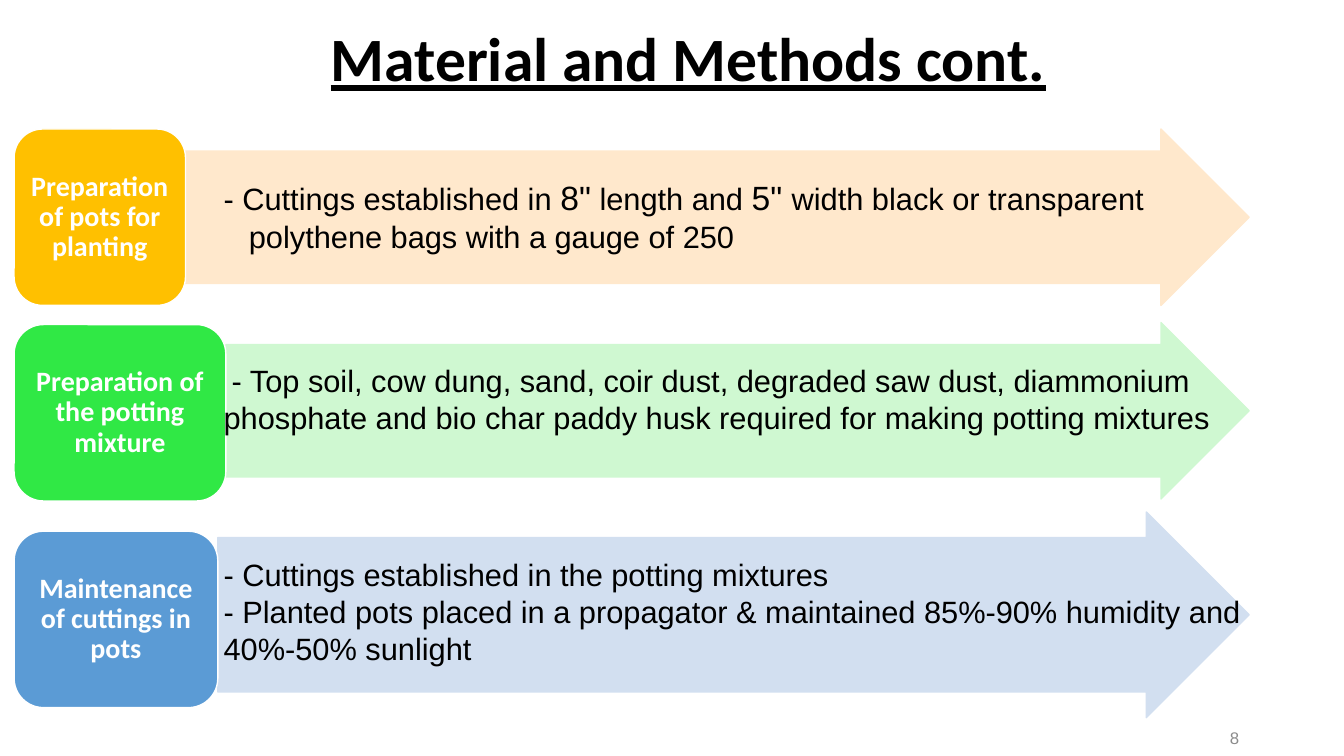
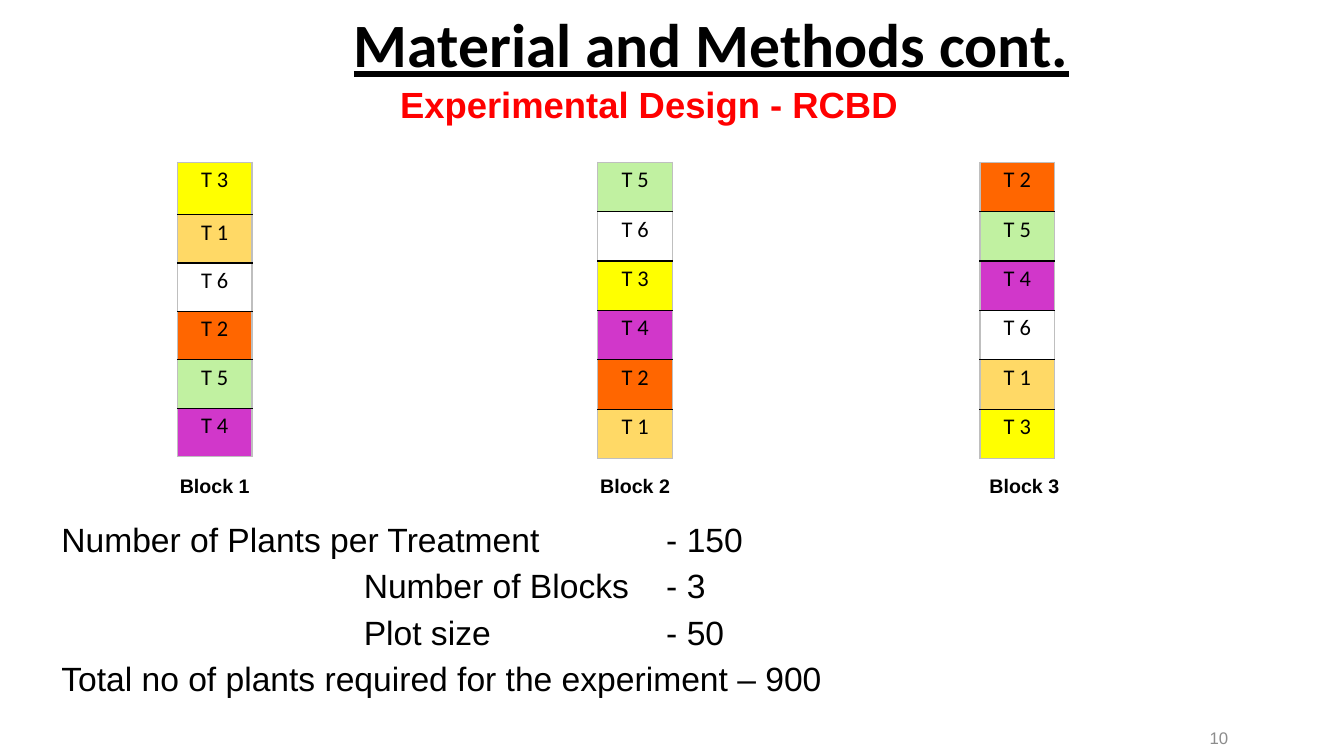
from lxml import etree
from pptx import Presentation
from pptx.dml.color import RGBColor
from pptx.enum.shapes import MSO_SHAPE
from pptx.enum.text import MSO_ANCHOR, PP_ALIGN
from pptx.oxml.ns import qn
from pptx.util import Inches, Pt

ARROW = MSO_SHAPE.RIGHT_ARROW
ROUNDED = MSO_SHAPE.ROUNDED_RECTANGLE
TOP, MIDDLE = MSO_ANCHOR.TOP, MSO_ANCHOR.MIDDLE
LEFT, CENTER, RIGHT = PP_ALIGN.LEFT, PP_ALIGN.CENTER, PP_ALIGN.RIGHT

BLACK = RGBColor(0x00, 0x00, 0x00)
WHITE = RGBColor(0xFF, 0xFF, 0xFF)
GREY = RGBColor(0x8C, 0x8C, 0x8C)
BORDER_GREY = RGBColor(0xBF, 0xBF, 0xBF)
RED = RGBColor(0xFF, 0x00, 0x00)
AMBER = RGBColor(0xFF, 0xC0, 0x00)
GREEN = RGBColor(0x30, 0xE8, 0x45)
BLUE = RGBColor(0x5B, 0x9B, 0xD5)
PALE_AMBER = RGBColor(0xFF, 0xE8, 0xCC)
PALE_GREEN = RGBColor(0xCF, 0xF8, 0xD1)
PALE_BLUE = RGBColor(0xD2, 0xDF, 0xF0)

TREATMENT_COLORS = {
    "T 1": RGBColor(0xFF, 0xD9, 0x66),
    "T 2": RGBColor(0xFF, 0x66, 0x00),
    "T 3": RGBColor(0xFF, 0xFF, 0x00),
    "T 4": RGBColor(0xD1, 0x37, 0xCA),
    "T 5": RGBColor(0xC1, 0xF1, 0xA1),
    "T 6": WHITE,
}

HEADING_FONT = "Calibri"
BODY_FONT = "Arial"


def write(paragraph, text, size=22, font=BODY_FONT, color=BLACK, bold=False,
          underline=False, align=LEFT, spacing=1.0, after=0):
    paragraph.alignment = align
    paragraph.line_spacing = spacing
    paragraph.space_after = Pt(after)
    pieces = [(text, size)] if isinstance(text, str) else text
    for piece, piece_size in pieces:
        run = paragraph.add_run()
        run.text = piece
        run.font.size = Pt(piece_size)
        run.font.name = font
        run.font.color.rgb = color
        run.font.bold = bold
        run.font.underline = underline


def set_indent(paragraph, left=0, first=0):
    properties = paragraph._p.get_or_add_pPr()
    properties.set("marL", str(Inches(left)))
    properties.set("indent", str(Inches(first)))


def set_tabs(paragraph, stops):
    properties = paragraph._p.get_or_add_pPr()
    tab_list = etree.SubElement(properties, qn("a:tabLst"))
    for stop in stops:
        etree.SubElement(tab_list, qn("a:tab"), pos=str(Inches(stop)), algn="l")


def set_border(cell, side, color):
    properties = cell._tc.get_or_add_tcPr()
    line = etree.Element(qn(f"a:ln{side}"), w=str(Pt(1)))
    fill = etree.SubElement(line, qn("a:solidFill"))
    etree.SubElement(fill, qn("a:srgbClr"), val=str(color))
    properties.insert("LRTB".index(side), line)


class Deck:
    def __init__(self):
        self.presentation = Presentation()
        self.presentation.slide_width = Inches(13.33)
        self.presentation.slide_height = Inches(7.5)
        self.slide = None

    def add_slide(self, title, left, top, number, number_left):
        layout = self.presentation.slide_layouts[5]
        self.slide = self.presentation.slides.add_slide(layout)
        shape = self.slide.shapes.title
        shape.left, shape.top = Inches(left), Inches(top)
        shape.width, shape.height = Inches(10.15), Inches(1.29)
        shape.text_frame.vertical_anchor = MIDDLE
        write(shape.text_frame.paragraphs[0], title, size=44, font=HEADING_FONT,
              bold=True, underline=True, spacing=0.9)
        self.text([number], number_left, 7.12, 3, 0.4, anchor=MIDDLE,
                  size=12, color=GREY, align=RIGHT)

    def text(self, lines, left, top, width, height, anchor=TOP, **style):
        box = self.slide.shapes.add_textbox(
            Inches(left), Inches(top), Inches(width), Inches(height))
        frame = box.text_frame
        frame.word_wrap = True
        frame.vertical_anchor = anchor
        for index, line in enumerate(lines):
            paragraph = frame.add_paragraph() if index else frame.paragraphs[0]
            write(paragraph, line, **style)
        return frame.paragraphs

    def shape(self, kind, left, top, width, height, fill, line):
        shape = self.slide.shapes.add_shape(
            kind, Inches(left), Inches(top), Inches(width), Inches(height))
        shape.shadow.inherit = False
        shape.fill.solid()
        shape.fill.fore_color.rgb = fill
        shape.line.color.rgb = line
        shape.line.width = Pt(1)
        return shape

    def arrow(self, left, top, height, color):
        arrow = self.shape(ARROW, left, top, 12.39 - left, height, color, color)
        arrow.adjustments[0] = 0.75
        arrow.adjustments[1] = 0.5

    def label(self, text, top, width, color):
        label = self.shape(ROUNDED, 0.14, top, width, 1.75, color, WHITE)
        frame = label.text_frame
        frame.word_wrap = True
        frame.vertical_anchor = MIDDLE
        frame.margin_left = frame.margin_right = Inches(0.08)
        frame.margin_top = frame.margin_bottom = Inches(0.04)
        write(frame.paragraphs[0], text, size=20, font=HEADING_FONT,
              color=WHITE, bold=True, align=CENTER, spacing=0.9)

    def block(self, treatments, left, row_heights):
        count = len(treatments)
        table = self.slide.shapes.add_table(
            count, 1, Inches(left), Inches(1.61), Inches(0.74),
            Inches(sum(row_heights))).table
        table.first_row = False
        table.horz_banding = False
        for index, treatment in enumerate(treatments):
            table.rows[index].height = Inches(row_heights[index])
            cell = table.cell(index, 0)
            cell.fill.solid()
            cell.fill.fore_color.rgb = TREATMENT_COLORS[treatment]
            cell.margin_left = cell.margin_right = Inches(0.07)
            cell.margin_top = cell.margin_bottom = 0
            write(cell.text_frame.paragraphs[0], treatment, size=16,
                  font=HEADING_FONT, align=CENTER, spacing=1.15, after=10)
            set_border(cell, "L", BORDER_GREY)
            set_border(cell, "R", BORDER_GREY)
            set_border(cell, "T", BLACK if index else BORDER_GREY)
            set_border(cell, "B", BLACK if index < count - 1 else BORDER_GREY)


def add_methods_slide(deck):
    deck.add_slide("Material and Methods cont.", 3.18, -0.03, "8", 9.39)
    steps = [
        ("Preparation of pots for planting", 1.28, 1.7, AMBER,
         1.83, 1.28, 1.75, PALE_AMBER),
        ("Preparation of the potting mixture", 3.22, 2.1, GREEN,
         2.24, 3.2, 1.75, PALE_GREEN),
        ("Maintenance of cuttings in pots", 5.27, 2.02, BLUE,
         2.16, 5.08, 2.04, PALE_BLUE),
    ]
    for name, top, width, color, arrow_left, arrow_top, height, pale in steps:
        deck.arrow(arrow_left, arrow_top, height, pale)
        deck.label(name, top, width, color)

    pots = deck.text([
        [("- Cuttings established in ", 22), ('8"', 24), (" length and ", 22),
         ('5" ', 24), ("width black or transparent", 22)],
        "polythene bags with a gauge of 250",
    ], 2.12, 1.71, 11.08, 0.88)
    set_indent(pots[1], left=0.25)
    mixture = deck.text([
        "- Top soil, cow dung, sand, coir dust, degraded saw dust, diammonium "
        "phosphate and bio char paddy husk required for making potting mixtures",
    ], 2.12, 3.54, 10.7, 1.21)
    set_indent(mixture[0], first=0.08)
    deck.text([
        "- Cuttings established in the potting mixtures",
        "- Planted pots placed in a propagator & maintained 85%-90% humidity "
        "and 40%-50% sunlight",
    ], 2.12, 5.46, 11.07, 1.21)


def add_design_slide(deck):
    deck.add_slide("Material and Methods cont.", 3.41, -0.17, "10", 9.28)
    deck.text(["Experimental Design - RCBD"], 3.87, 0.77, 6.29, 0.54,
              size=26, color=RED, bold=True)
    even_rows = [0.49] * 6
    blocks = [
        ("Block 1", 1.76, 1.04, "315".replace("", "")[:0] or "316254",
         [0.52] + [0.48] * 5),
        ("Block 2", 5.93, 5.21, "563421", even_rows),
        ("Block 3", 9.72, 9.07, "254613", even_rows),
    ]
    for name, left, name_left, order, row_heights in blocks:
        deck.block([f"T {digit}" for digit in order], left, row_heights)
        deck.text([name], name_left, 4.65, 2.18, 0.41,
                  size=14, bold=True, align=CENTER)
    counts = deck.text([
        "Number of Plants per Treatment\t- 150",
        "\tNumber of Blocks\t- 3",
        "\tPlot size\t- 50",
        "Total no of plants required for the experiment – 900",
    ], 0.51, 5.04, 8.47, 1.96, size=24, spacing=1.15)
    for paragraph in counts:
        set_tabs(paragraph, [3, 6])


def main():
    deck = Deck()
    add_methods_slide(deck)
    add_design_slide(deck)
    deck.presentation.save("out.pptx")


if __name__ == "__main__":
    main()
